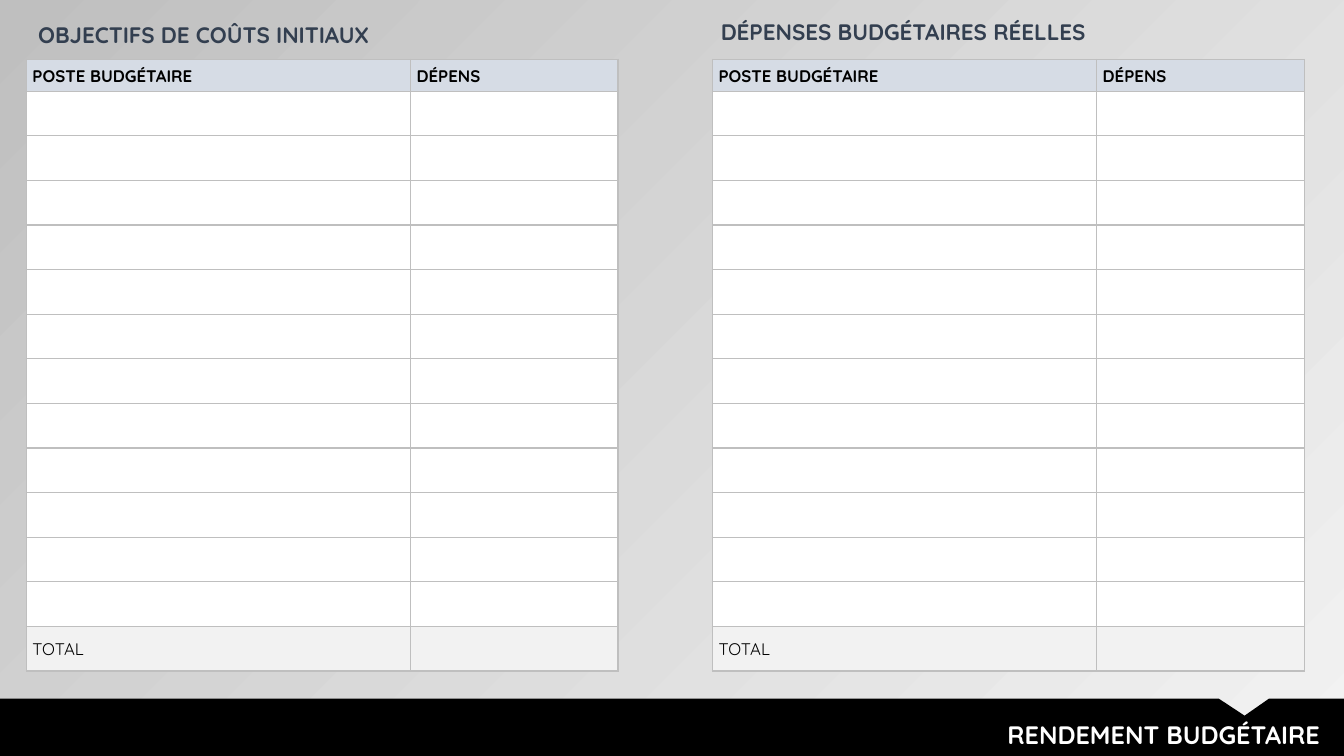
from dataclasses import dataclass

from lxml import etree
from pptx import Presentation
from pptx.dml.color import RGBColor
from pptx.enum.text import MSO_ANCHOR, MSO_AUTO_SIZE, PP_ALIGN
from pptx.oxml.ns import qn
from pptx.util import Pt

MIDDLE = MSO_ANCHOR.MIDDLE
GROW = MSO_AUTO_SIZE.SHAPE_TO_FIT_TEXT
RIGHT = PP_ALIGN.RIGHT
TITLE_ONLY = 5


@dataclass(frozen=True)
class Theme:
    font: str = "Quicksand"
    black: str = "000000"
    white: str = "FFFFFF"
    heading: str = "333F50"
    header_fill: str = "D6DCE5"
    total_fill: str = "F2F2F2"
    border: str = "BFBFBF"
    light: str = "F2F2F2"
    dark: str = "BFBFBF"
    title_size: int = 18
    heading_size: int = 16
    cell_size: int = 12


theme = Theme()


def add_span(para, text, size, color, bold=True):
    span = para.add_run()
    span.text = text
    span.font.name = theme.font
    span.font.size = Pt(size)
    span.font.bold = bold
    span.font.color.rgb = RGBColor.from_string(color)


def style_cell(cell, fill):
    """Give a cell its fill, margins and thin border on all four sides."""
    cell.margin_left = cell.margin_right = Pt(4.5)
    cell.margin_top = cell.margin_bottom = 0
    cell.vertical_anchor = MIDDLE
    properties = cell._tc.get_or_add_tcPr()
    for side in ("a:lnL", "a:lnR", "a:lnT", "a:lnB"):
        line = etree.SubElement(properties, qn(side), w=str(Pt(1)))
        solid = etree.SubElement(line, qn("a:solidFill"))
        etree.SubElement(solid, qn("a:srgbClr"), val=theme.border)
    cell.fill.solid()
    cell.fill.fore_color.rgb = RGBColor.from_string(fill)


deck = Presentation()
deck.slide_width, deck.slide_height = Pt(960), Pt(540)
page = deck.slides.add_slide(deck.slide_layouts[TITLE_ONLY])

background = page.background.fill
background.gradient()
background.gradient_angle = 135
for stop, color in zip(background.gradient_stops, (theme.light, theme.dark)):
    stop.color.rgb = RGBColor.from_string(color)

# Footer band with a notch above the title
outline = page.shapes.build_freeform(Pt(0), Pt(499))
outline.add_line_segments([
    (Pt(x), Pt(y)) for x, y in
    [(870.5, 499), (889, 511.2), (906.5, 499), (960, 499), (960, 540), (0, 540)]
])
band = outline.convert_to_shape()
band.shadow.inherit = False
band.fill.solid()
band.fill.fore_color.rgb = RGBColor.from_string(theme.black)
band.line.fill.background()

title = page.shapes.title
title.element.addprevious(band.element)
title.left, title.top, title.width, title.height = Pt(298), Pt(510), Pt(652), Pt(29)
title.text_frame.word_wrap = True
title.text_frame.auto_size = GROW
title.text_frame.vertical_anchor = MIDDLE
title_para = title.text_frame.paragraphs[0]
title_para.alignment = RIGHT
add_span(title_para, "RENDEMENT BUDGÉTAIRE", theme.title_size, theme.white)

# Heading text, heading left and top, table left
budgets = [
    ("OBJECTIFS DE COÛTS INITIAUX", 18.7, 8.8, 18.7),
    ("DÉPENSES BUDGÉTAIRES RÉELLES", 506.3, 6.2, 508.8),
]
column_widths = (274.4, 148.4)
row_heights = [22.7] + [31.87] * 13
last_row = len(row_heights) - 1
labels = {
    (0, 0): "POSTE BUDGÉTAIRE",
    (0, 1): "DÉPENS",
    (last_row, 0): "TOTAL",
}
row_fills = {0: theme.header_fill, last_row: theme.total_fill}

for heading, heading_left, heading_top, table_left in budgets:
    box = page.shapes.add_textbox(Pt(heading_left), Pt(heading_top), Pt(402), Pt(29))
    frame = box.text_frame
    frame.word_wrap = True
    frame.auto_size = GROW
    frame.margin_left = frame.margin_right = Pt(8.6)
    frame.margin_top = frame.margin_bottom = Pt(4.3)
    para = frame.paragraphs[0]
    para.line_spacing = Pt(21.5)
    para.space_before = Pt(3.2)
    add_span(para, heading, theme.heading_size, theme.heading)

    table = page.shapes.add_table(
        len(row_heights), len(column_widths), Pt(table_left), Pt(42.4),
        Pt(sum(column_widths)), Pt(sum(row_heights))).table
    table.horz_banding = False
    for column, width in zip(table.columns, column_widths):
        column.width = Pt(width)
    for row_number, height in enumerate(row_heights):
        table.rows[row_number].height = Pt(height)
        for column_number in range(len(column_widths)):
            cell = table.cell(row_number, column_number)
            style_cell(cell, row_fills.get(row_number, theme.white))
            label = labels.get((row_number, column_number))
            if label:
                para = cell.text_frame.paragraphs[0]
                para.line_spacing = 1.07
                add_span(para, label, theme.cell_size, theme.black, bold=row_number == 0)

deck.save("out.pptx")
